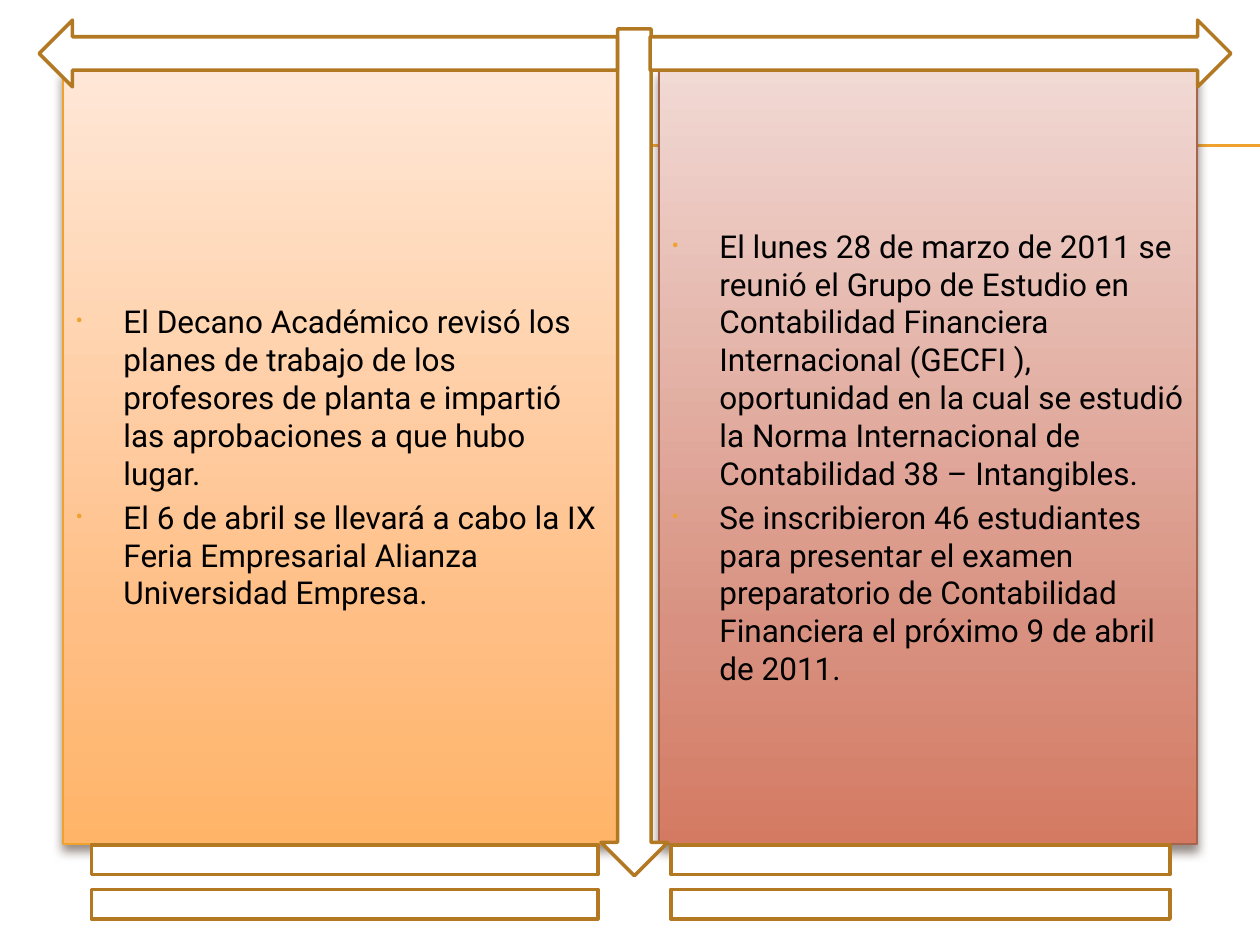
from copy import deepcopy

from lxml import etree
from pptx import Presentation
from pptx.dml.color import RGBColor
from pptx.enum.shapes import MSO_CONNECTOR as CONNECTOR, MSO_SHAPE as SHAPE
from pptx.enum.text import MSO_ANCHOR as ANCHOR, MSO_AUTO_SIZE as AUTO_SIZE, PP_ALIGN as ALIGN
from pptx.oxml import parse_xml
from pptx.oxml.ns import nsdecls, qn
from pptx.util import Pt

PX = 9144  # EMU per px, 100 px to the inch
AMBER, BRONZE, BROWN = "F0A22E", "B27822", "A5644E"


def color(value):
    return RGBColor.from_string(value)


def add_bullet(frame, text, first=False, size=18, font="Roboto", fill="000000"):
    paragraph = frame.paragraphs[0] if first else frame.add_paragraph()
    properties = paragraph._p.get_or_add_pPr()
    properties.set("marL", str(38 * PX))
    properties.set("indent", str(-38 * PX))
    for xml in (f'<a:buClr {nsdecls("a")}><a:srgbClr val="{AMBER}"/></a:buClr>',
                f'<a:buSzPct {nsdecls("a")} val="70000"/>',
                f'<a:buFont {nsdecls("a")} typeface="{font}"/>',
                f'<a:buChar {nsdecls("a")} char="•"/>'):
        properties.append(parse_xml(xml))
    paragraph.alignment = ALIGN.LEFT
    paragraph.space_before = Pt(0 if first else 3.6)
    run = paragraph.add_run()
    run.text = text
    run.font.size = Pt(size)
    run.font.name = font
    run.font.color.rgb = color(fill)


presentation = Presentation()
presentation.slide_width = 1000 * PX
presentation.slide_height = 750 * PX
slide = presentation.slides.add_slide(presentation.slide_layouts[3])
title = slide.shapes.title._element
title.getparent().remove(title)

# Double rule behind the panels
for index, y in enumerate((115, 116)):
    rule = slide.shapes.add_connector(CONNECTOR.STRAIGHT, 56 * PX, y * PX, 1000 * PX, y * PX)
    rule.line.color.rgb = color(AMBER)
    rule.line.width = Pt(0.75)
    etree.SubElement(rule._element.spPr, qn("a:effectLst"))
    slide.shapes._spTree.insert(2 + index, rule._element)

# Two gradient panels with bulleted lists
panels = [
    (1, 50, 442, AMBER, ("FFE7D7", "FFBE84", "FFB468"), [
        "El Decano Académico revisó los planes de trabajo de los profesores de planta "
        "e impartió las aprobaciones a que hubo lugar.",
        "El 6 de abril se llevará a cabo la IX Feria Empresarial Alianza Universidad Empresa.",
    ]),
    (2, 523, 427, BROWN, ("F1D9D4", "D89180", "D47A62"), [
        "El lunes 28 de marzo de 2011 se reunió el Grupo de Estudio en Contabilidad "
        "Financiera Internacional (GECFI ), oportunidad en la cual se estudió la Norma "
        "Internacional de Contabilidad 38 – Intangibles.",
        "Se inscribieron 46 estudiantes para presentar el examen preparatorio de "
        "Contabilidad Financiera el próximo 9 de abril de 2011.",
    ]),
]
for number, left, width, outline, stops, texts in panels:
    panel = slide.placeholders[number]
    panel.left, panel.top = left * PX, 55 * PX
    panel.width, panel.height = width * PX, 615 * PX
    panel.fill.gradient()
    panel.fill.gradient_angle = 270
    stop_list = panel._element.spPr.find(".//" + qn("a:gsLst"))
    stop_list.append(deepcopy(stop_list[-1]))
    for stop, position, value in zip(panel.fill.gradient_stops, (0, 0.72, 1), stops):
        stop.position = position
        stop.color.rgb = color(value)
    panel.line.color.rgb = color(outline)
    panel.line.width = Pt(0.79)
    panel._element.spPr.append(parse_xml(
        f'<a:effectLst {nsdecls("a")}><a:outerShdw blurRad="{Pt(6)}" dist="{Pt(4)}" '
        'dir="5400000" rotWithShape="0"><a:srgbClr val="4E3B30"><a:alpha val="60000"/>'
        '</a:srgbClr></a:outerShdw></a:effectLst>'))
    frame = panel.text_frame
    frame.word_wrap = True
    frame.auto_size = AUTO_SIZE.NONE
    frame.vertical_anchor = ANCHOR.MIDDLE
    for index, text in enumerate(texts):
        add_bullet(frame, text, first=index == 0)

# White arrows and double bars framing the panels
for kind, left, top, width, height in (
    (SHAPE.DOWN_ARROW, 477, 23, 53, 672),
    (SHAPE.RIGHT_ARROW, 516, 16, 461, 53),
    (SHAPE.LEFT_ARROW, 31, 16, 459, 53),
    (SHAPE.MATH_EQUAL, 0, 650, 547, 100),
    (SHAPE.MATH_EQUAL, 461, 650, 539, 100),
):
    shape = slide.shapes.add_shape(kind, left * PX, top * PX, width * PX, height * PX)
    shape.shadow.inherit = False
    shape.fill.solid()
    shape.fill.fore_color.rgb = color("FFFFFF")
    shape.line.color.rgb = color(BRONZE)
    shape.line.width = Pt(2)

presentation.save("out.pptx")
